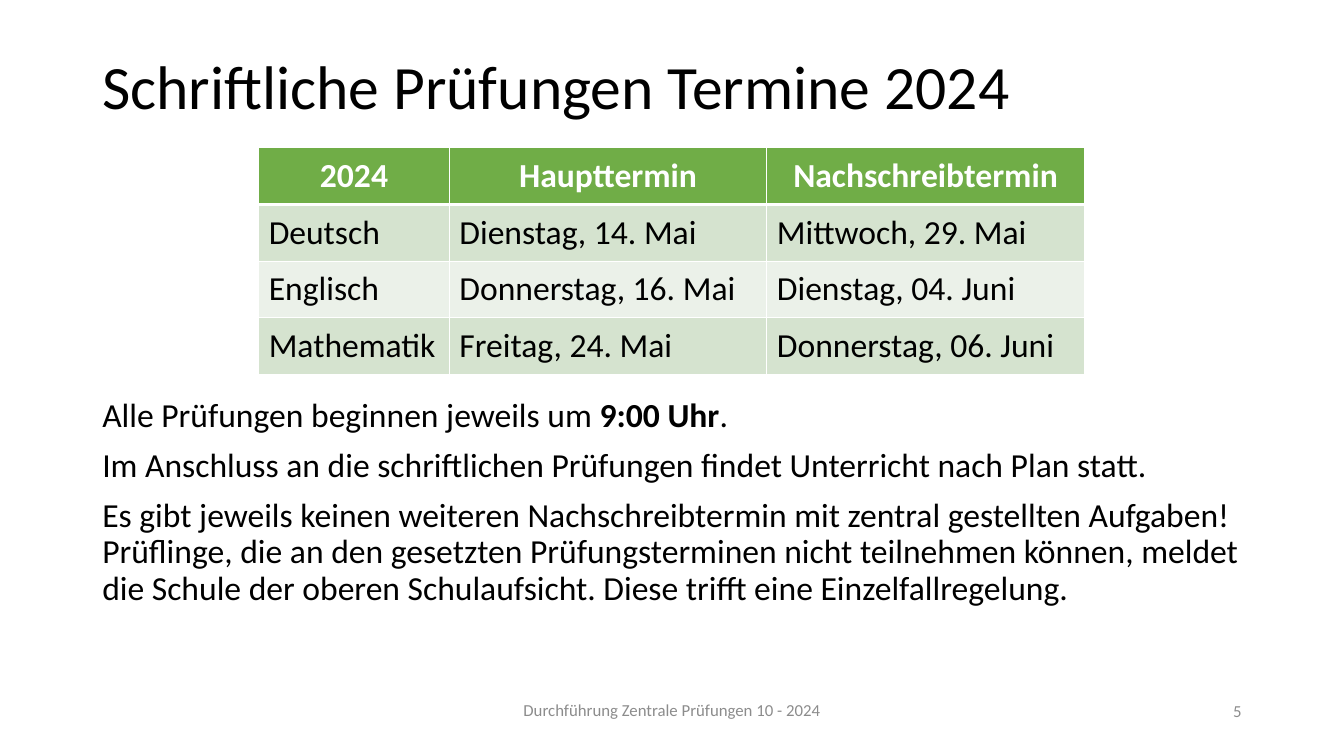
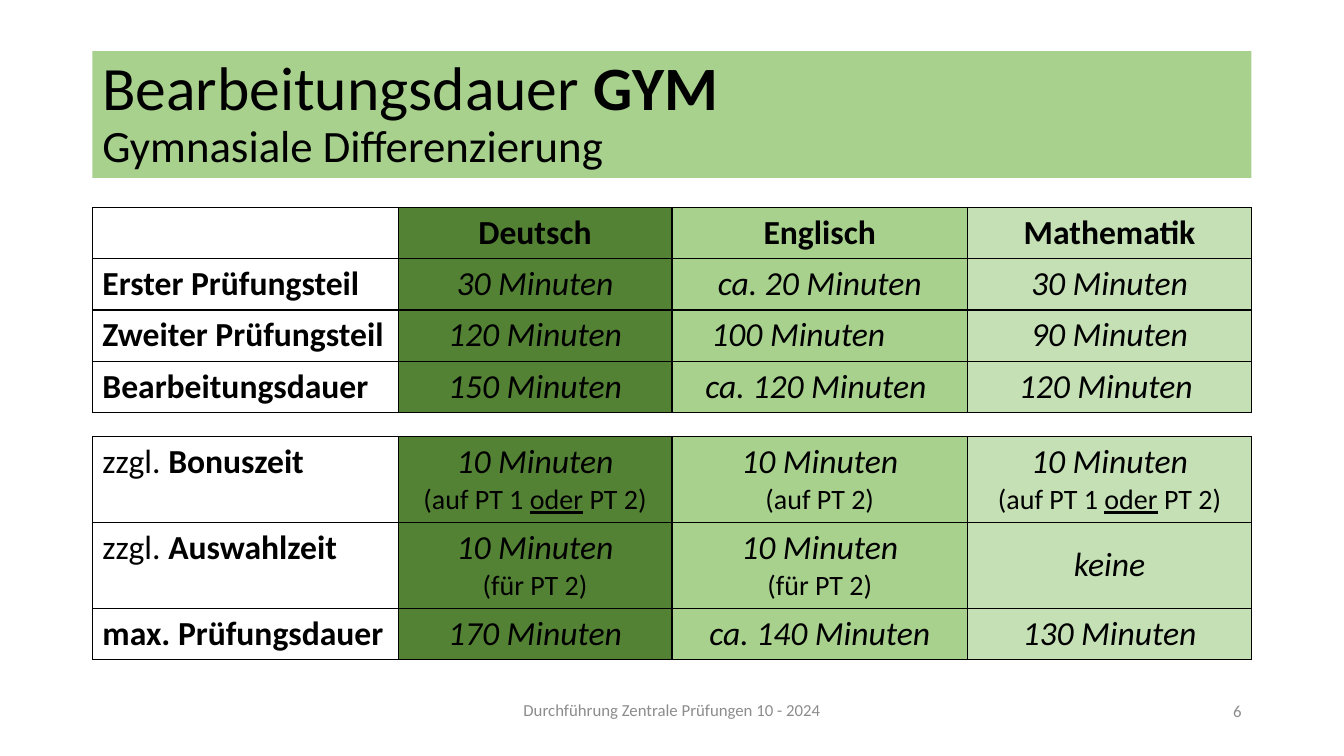
from dataclasses import dataclass, replace
from typing import Callable, NamedTuple, Optional

from lxml.etree import SubElement
from pptx import Presentation
from pptx.dml.color import RGBColor
from pptx.enum.text import MSO_ANCHOR as Anchor, PP_ALIGN as Align
from pptx.oxml.ns import qn
from pptx.util import Emu, Inches, Pt

COLS, ROWS = 160, 90          # grid over the whole slide
UNIT = Inches(1) / 12         # side of one grid square


@dataclass(frozen=True)
class Theme:
    font: str = "Calibri"
    black: str = "000000"
    white: str = "FFFFFF"
    grey: str = "8C8C8C"
    header: str = "70AD47"
    bands: tuple = ("EBF1E9", "D5E3CF")
    subjects: tuple = (None, "548235", "A9D18E", "C5E0B4")
    title_fill: str = "A9D18E"
    title: int = 44
    subtitle: int = 32
    body: int = 24
    note: int = 20
    footer: int = 12
    tight: float = 0.9
    gap: int = 10


T = Theme()


class Box(NamedTuple):
    """Left, top, width and height in grid squares."""
    x: float
    y: float
    w: float
    h: float


class Run(NamedTuple):
    text: str
    bold: Optional[bool] = None
    underline: Optional[bool] = None


@dataclass(frozen=True)
class Para:
    runs: tuple
    size: int = T.body
    color: str = T.black
    bold: bool = False
    italic: bool = False
    align: Align = Align.LEFT
    indent: float = 0
    spacing: Optional[float] = None


@dataclass(frozen=True)
class Cell:
    paras: tuple = ()
    anchor: Anchor = Anchor.MIDDLE


@dataclass(frozen=True)
class Grid:
    x: float
    y: float
    cols: tuple
    rows: tuple
    cells: tuple
    fill: Callable
    line: str
    rule: Callable = lambda edge: 1    # line width by row edge


def length(n: float) -> Emu:
    return Emu(round(n * UNIT))


def rgb(color: str) -> RGBColor:
    return RGBColor.from_string(color)


def para(*runs, **style) -> Para:
    return Para(tuple(r if isinstance(r, Run) else Run(r) for r in runs), **style)


# Text

def write(tf, paras: tuple, gap: int = 0) -> None:
    for i, item in enumerate(paras):
        p = tf.add_paragraph() if i else tf.paragraphs[0]
        p.alignment = item.align
        if item.indent:
            p._p.get_or_add_pPr().set("marL", str(length(item.indent)))
        if item.spacing:
            p.line_spacing = item.spacing
        if i and gap:
            p.space_before = Pt(gap)
        f = p.font
        f.name, f.size = T.font, Pt(item.size)
        f.bold, f.italic = item.bold, item.italic
        f.color.rgb = rgb(item.color)
        for run in item.runs:
            r = p.add_run()
            r.text = run.text
            if run.bold is not None:
                r.font.bold = run.bold
            if run.underline:
                r.font.underline = True


def add_text(s, box: Box, *paras: Para, anchor: Anchor = Anchor.TOP,
             fill: Optional[str] = None, gap: int = 0) -> None:
    sp = s.shapes.add_textbox(*map(length, box))
    if fill:
        sp.fill.solid()
        sp.fill.fore_color.rgb = rgb(fill)
    tf = sp.text_frame
    tf.word_wrap, tf.vertical_anchor = True, anchor
    write(tf, paras, gap)


# Tables

def add_border(tc_pr, side: str, color: str, width: float) -> None:
    ln = SubElement(tc_pr, qn(f"a:ln{side}"), w=str(Pt(width)))
    SubElement(SubElement(ln, qn("a:solidFill")), qn("a:srgbClr"), val=color)


def add_grid(s, g: Grid) -> None:
    table = s.shapes.add_table(len(g.rows), len(g.cols), length(g.x), length(g.y),
                               length(sum(g.cols)), length(sum(g.rows))).table
    table.first_row = table.horz_banding = False
    for column, w in zip(table.columns, g.cols):
        column.width = length(w)
    for row, h in zip(table.rows, g.rows):
        row.height = length(h)
    for i, line in enumerate(g.cells):
        for j, item in enumerate(line):
            cell = table.cell(i, j)
            cell.vertical_anchor = item.anchor
            widths = {"L": 1, "R": 1, "T": g.rule(i), "B": g.rule(i + 1)}
            for side, width in widths.items():
                add_border(cell._tc.get_or_add_tcPr(), side, g.line, width)
            color = g.fill(i, j)
            if color:
                cell.fill.solid()
                cell.fill.fore_color.rgb = rgb(color)
            else:
                cell.fill.background()
            write(cell.text_frame, item.paras)


def label(*runs, bold: bool = True) -> Cell:
    return Cell((para(*runs, bold=bold),), Anchor.TOP)


def heading(text: str, color: str = T.black, anchor: Anchor = Anchor.TOP) -> Cell:
    return Cell((para(text, bold=True, color=color, align=Align.CENTER),), anchor)


def duration(text: str, *note) -> Cell:
    paras = (para(text, italic=True, align=Align.CENTER),)
    if note:
        paras += (para(*note, size=T.note, align=Align.CENTER),)
    return Cell(paras)


# Shared slide parts

MARGIN, WIDTH = 11, 138


def new_slide(prs, number: int, title: tuple, height: float,
              fill: Optional[str] = None):
    s = prs.slides.add_slide(prs.slide_layouts[6])
    add_text(s, Box(61, 82.7, 38, 3.6),
             para("Durchführung Zentrale Prüfungen 10 - 2024", size=T.footer,
                  color=T.grey, align=Align.CENTER))
    add_text(s, Box(113, 82.2, 36, 4.8),
             para(str(number), size=T.footer, color=T.grey, align=Align.RIGHT),
             anchor=Anchor.MIDDLE)
    add_text(s, Box(MARGIN, 6.1, WIDTH, height),
             *(replace(p, spacing=T.tight) for p in title),
             anchor=Anchor.MIDDLE, fill=fill)
    return s


# Slides

def dates_slide(prs) -> None:
    s = new_slide(prs, 5, (para("Schriftliche Prüfungen Termine 2024", size=T.title),), 9.2)
    dates = (("Deutsch", "Dienstag, 14. Mai", "Mittwoch, 29. Mai"),
             ("Englisch", "Donnerstag, 16. Mai", "Dienstag, 04. Juni"),
             ("Mathematik", "Freitag, 24. Mai", "Donnerstag, 06. Juni"))
    head = tuple(heading(t, T.white, Anchor.MIDDLE)
                 for t in ("2024", "Haupttermin", "Nachschreibtermin"))
    body = tuple(tuple(Cell((para(t),)) for t in row) for row in dates)
    add_grid(s, Grid(30.8, 17.6, (22.7, 37.8, 37.8), (6.75,) * 4, (head, *body),
                     fill=lambda i, j: T.bands[i % 2] if i else T.header,
                     line=T.white, rule=lambda edge: 3 if edge == 1 else 1))
    notes = (
        ("Alle Prüfungen beginnen jeweils um ", Run("9:00 Uhr", True), "."),
        ("Im Anschluss an die schriftlichen Prüfungen findet Unterricht nach Plan statt.",),
        ("Es gibt jeweils keinen weiteren Nachschreibtermin mit zentral gestellten "
         "Aufgaben! Prüflinge, die an den gesetzten Prüfungsterminen nicht teilnehmen "
         "können, meldet die Schule der oberen Schulaufsicht. Diese trifft eine "
         "Einzelfallregelung.",))
    add_text(s, Box(MARGIN, 46.8, WIDTH, 34.3),
             *(para(*runs, spacing=T.tight) for runs in notes), gap=T.gap)


def durations_slide(prs) -> None:
    title = (para("Bearbeitungsdauer ", Run("GYM", True), size=T.title),
             para("Gymnasiale Differenzierung", size=T.subtitle))
    s = new_slide(prs, 6, title, 15.1, T.title_fill)
    either = ("(auf PT 1 ", Run("oder", underline=True), " PT 2)")
    single, double = 6.1, 10.2

    parts = (
        (Cell(), *map(heading, ("Deutsch", "Englisch", "Mathematik"))),
        (label("Erster Prüfungsteil"),
         *map(duration, ("30 Minuten", "ca. 20 Minuten", "30 Minuten"))),
        (label("Zweiter Prüfungsteil"), duration("120 Minuten"),
         Cell((para("100 Minuten", italic=True, indent=3.5),)), duration("90 Minuten")),
        (label("Bearbeitungsdauer"),
         *map(duration, ("150 Minuten", "ca. 120 Minuten ", "120 Minuten "))))
    extras = (
        (label("zzgl. ", Run("Bonuszeit", True), bold=False),
         duration("10 Minuten", *either), duration("10 Minuten", "(auf PT 2)"),
         duration("10 Minuten", *either)),
        (label("zzgl.", Run(" Auswahlzeit", True), bold=False),
         *(duration("10 Minuten", "(für PT 2)") for _ in range(2)), duration("keine")),
        (label("max. Prüfungsdauer"),
         *map(duration, ("170 Minuten", "ca. 140 Minuten", "130 Minuten"))))
    for top, rows, cells in ((24.7, (single,) * 4, parts),
                             (52, (double, double, single), extras)):
        add_grid(s, Grid(MARGIN, top, (36.4, 32.6, 35.2, 33.8), rows, cells,
                         fill=lambda i, j: T.subjects[j], line=T.black))


def main() -> None:
    prs = Presentation()
    prs.slide_width, prs.slide_height = length(COLS), length(ROWS)
    dates_slide(prs)
    durations_slide(prs)
    prs.save("out.pptx")


if __name__ == "__main__":
    main()
